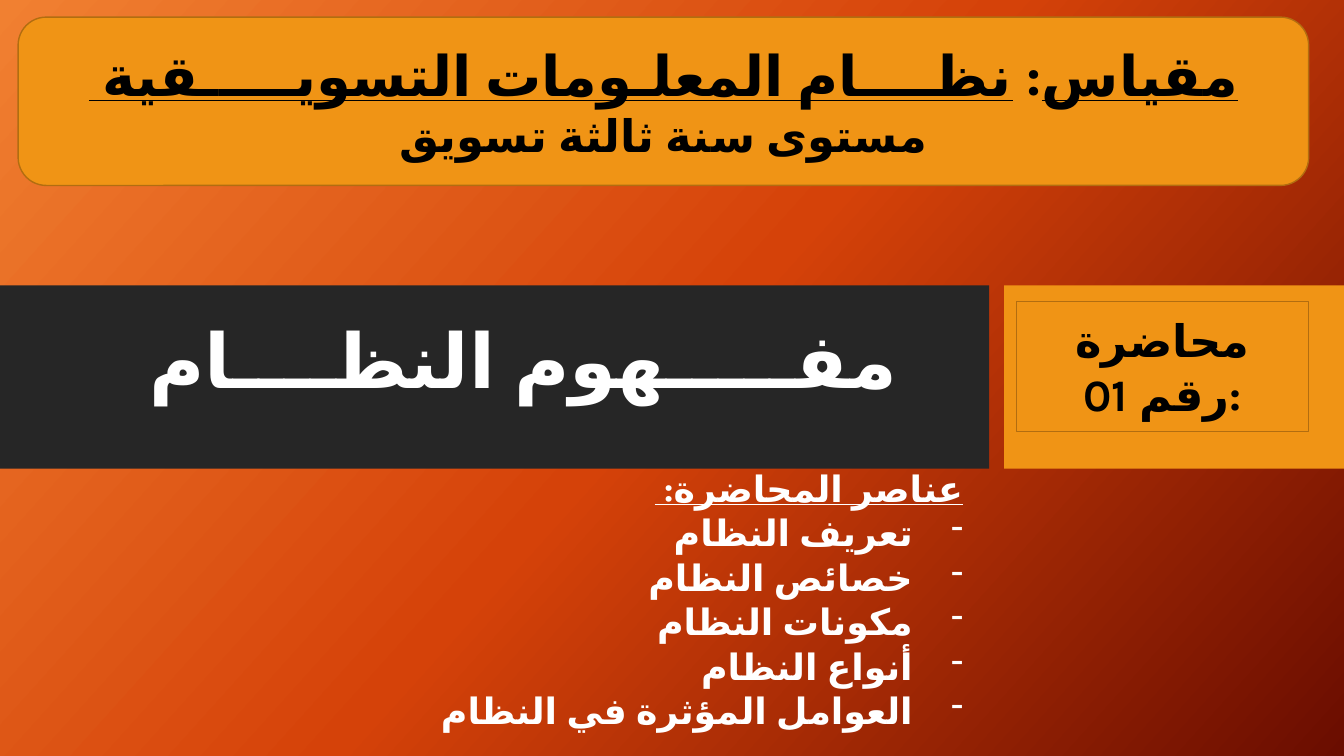
"""Build the opening slide of a lecture on the concept of a system."""
from copy import deepcopy
from dataclasses import dataclass, field

from lxml import etree
from pptx import Presentation
from pptx.dml.color import RGBColor
from pptx.enum.lang import MSO_LANGUAGE_ID
from pptx.enum.shapes import MSO_SHAPE
from pptx.enum.text import MSO_ANCHOR, PP_ALIGN
from pptx.oxml.ns import qn
from pptx.util import Inches, Pt

RECT, ROUND = MSO_SHAPE.RECTANGLE, MSO_SHAPE.ROUNDED_RECTANGLE
CENTER, RIGHT = PP_ALIGN.CENTER, PP_ALIGN.RIGHT
TOP, MIDDLE, BOTTOM = MSO_ANCHOR.TOP, MSO_ANCHOR.MIDDLE, MSO_ANCHOR.BOTTOM
ARABIC = MSO_LANGUAGE_ID.ARABIC_ALGERIA

WHITE = RGBColor(0xFF, 0xFF, 0xFF)
BLACK = RGBColor(0x00, 0x00, 0x00)
DARK = RGBColor(0x26, 0x26, 0x26)
AMBER = RGBColor(0xF0, 0x94, 0x15)
BROWN = RGBColor(0xB2, 0x6D, 0x10)
GLOW = [
    (0, RGBColor(0xF1, 0x80, 0x31)),
    (0.5, RGBColor(0xD5, 0x42, 0x09)),
    (1, RGBColor(0x6A, 0x0D, 0x00)),
]
FONT = "Karla"
TOPICS = [
    "تعريف النظام",
    "خصائص النظام",
    "مكونات النظام",
    "أنواع النظام",
    "العوامل المؤثرة في النظام",
]


@dataclass
class Run:
    text: str
    size: float
    color: RGBColor
    under: bool = False


@dataclass
class Line:
    runs: list[Run]
    rtl: bool = True
    dash: bool = False
    form: dict = field(default_factory=lambda: {"alignment": CENTER})


@dataclass
class Box:
    area: tuple[float, float, float, float]
    lines: list[Line] = field(default_factory=list)
    kind: MSO_SHAPE | None = None
    fill: RGBColor | None = None
    edge: RGBColor | None = None
    anchor: MSO_ANCHOR = MIDDLE


def apply(target, form: dict) -> None:
    """Set each named format value on the target."""
    for name, value in form.items():
        setattr(target, name, value)


def paint(slide) -> None:
    """Give the slide its diagonal three-stop gradient."""
    fill = slide.background.fill
    fill.gradient()
    fill.gradient_angle = 318
    stops = next(slide.element.iter(qn("a:gsLst")))
    stops.insert(1, deepcopy(stops[0]))
    for stop, (place, color) in zip(fill.gradient_stops, GLOW):
        stop.position = place
        stop.color.rgb = color


def write(para, line: Line) -> None:
    """Fill a paragraph with the runs of a line."""
    props = para._p.get_or_add_pPr()
    if line.rtl:
        props.set("rtl", "1")
    if line.dash:
        props.set("marL", str(Inches(0.5)))
        props.set("indent", str(Inches(-0.5)))
        etree.SubElement(props, qn("a:buFontTx"))
        etree.SubElement(props, qn("a:buChar"), char="-")
    apply(para, line.form)
    for run in line.runs:
        part = para.add_run()
        part.text = run.text
        apply(part.font, {"name": FONT, "size": Pt(run.size), "bold": True,
                          "underline": run.under, "language_id": ARABIC})
        part.font.color.rgb = run.color
        etree.SubElement(part._r.get_or_add_rPr(), qn("a:cs"), typeface=FONT)


def draw(slide, box: Box) -> None:
    """Draw a box and its text."""
    area = [Inches(size) for size in box.area]
    if box.kind is None:
        shape = slide.shapes.add_textbox(*area)
    else:
        shape = slide.shapes.add_shape(box.kind, *area)
        shape.shadow.inherit = False
        shape.fill.solid()
        shape.fill.fore_color.rgb = box.fill
        if box.edge is None:
            shape.line.fill.background()
        else:
            shape.line.color.rgb = box.edge
            shape.line.width = Pt(1)
    frame = shape.text_frame
    apply(frame, {"word_wrap": True, "vertical_anchor": box.anchor})
    for index, line in enumerate(box.lines):
        para = frame.add_paragraph() if index else frame.paragraphs[0]
        write(para, line)


def main() -> None:
    """Build and save the slide."""
    deck = Presentation()
    apply(deck, {"slide_width": Inches(13.33), "slide_height": Inches(7.5)})
    slide = deck.slides.add_slide(deck.slide_layouts[6])
    paint(slide)

    head = {"alignment": RIGHT, "line_spacing": 0.7}
    item = {**head, "space_before": Pt(10)}
    title = Line([Run("مفـــــهوم النظــــام", 54, WHITE)], rtl=False,
                 form={"alignment": CENTER, "line_spacing": 0.9})
    plan = [Line([Run("عناصر المحاضرة: ", 25.9, WHITE, True)], form=head)]
    plan += [Line([Run(topic, 25.9, WHITE)], dash=True, form=item)
             for topic in TOPICS]
    label = Line([Run("محاضرة رقم 01:", 32, BLACK)], rtl=False)
    course = Line([
        Run("مقياس", 40, BLACK, True),
        Run(": ", 40, BLACK),
        Run("نظــــام المعلـومات التسويـــــقية ", 40, BLACK, True),
    ])
    level = Line([Run("مستوى سنة ثالثة تسويق", 32, BLACK)])

    for box in [
        Box((0, 2.83, 9.81, 1.82), kind=RECT, fill=DARK),
        Box((9.96, 2.83, 3.37, 1.82), kind=RECT, fill=AMBER),
        Box((0.74, 2.57, 8.91, 1.5), [title], anchor=BOTTOM),
        Box((0.74, 4.69, 8.91, 2.69), plan, anchor=TOP),
        Box((10.08, 2.99, 2.9, 1.29), [label], RECT, AMBER, BROWN),
        Box((0.18, 0.17, 12.8, 1.67), [course, level], ROUND, AMBER, BROWN),
    ]:
        draw(slide, box)
    deck.save("out.pptx")


if __name__ == "__main__":
    main()
